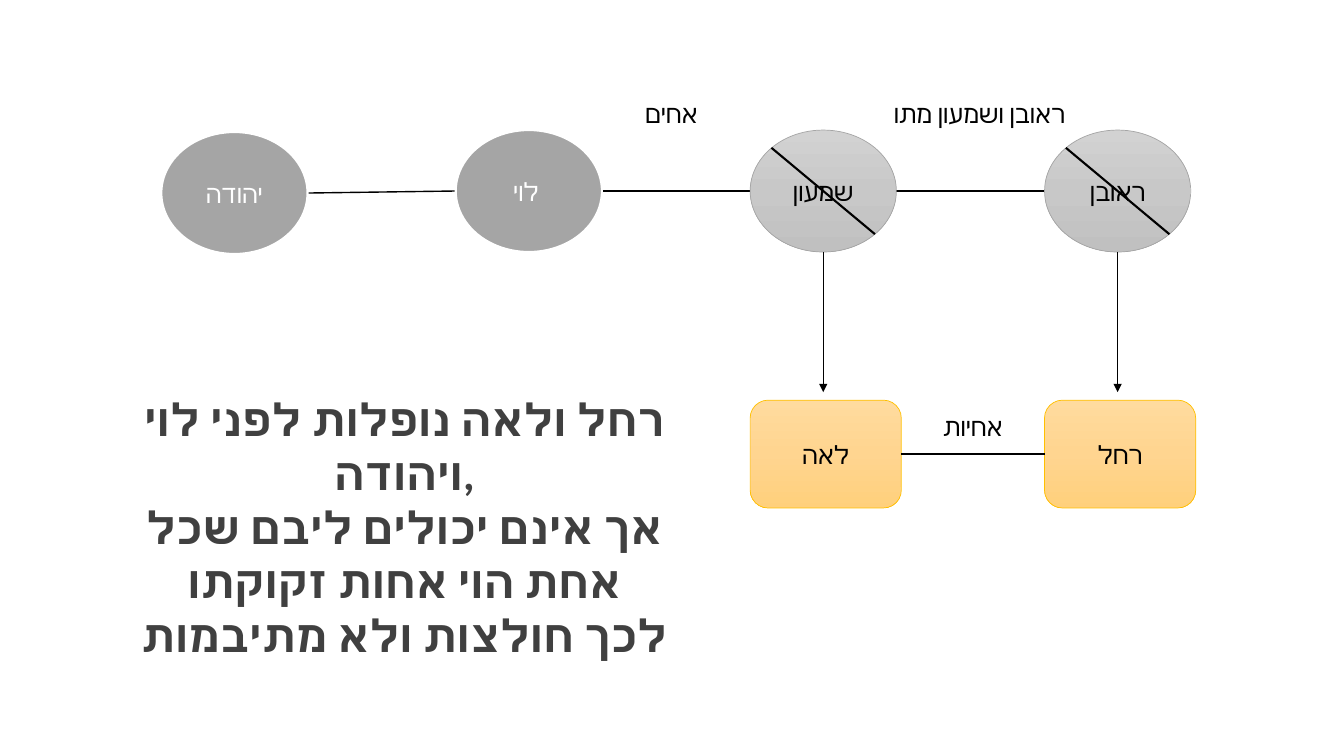
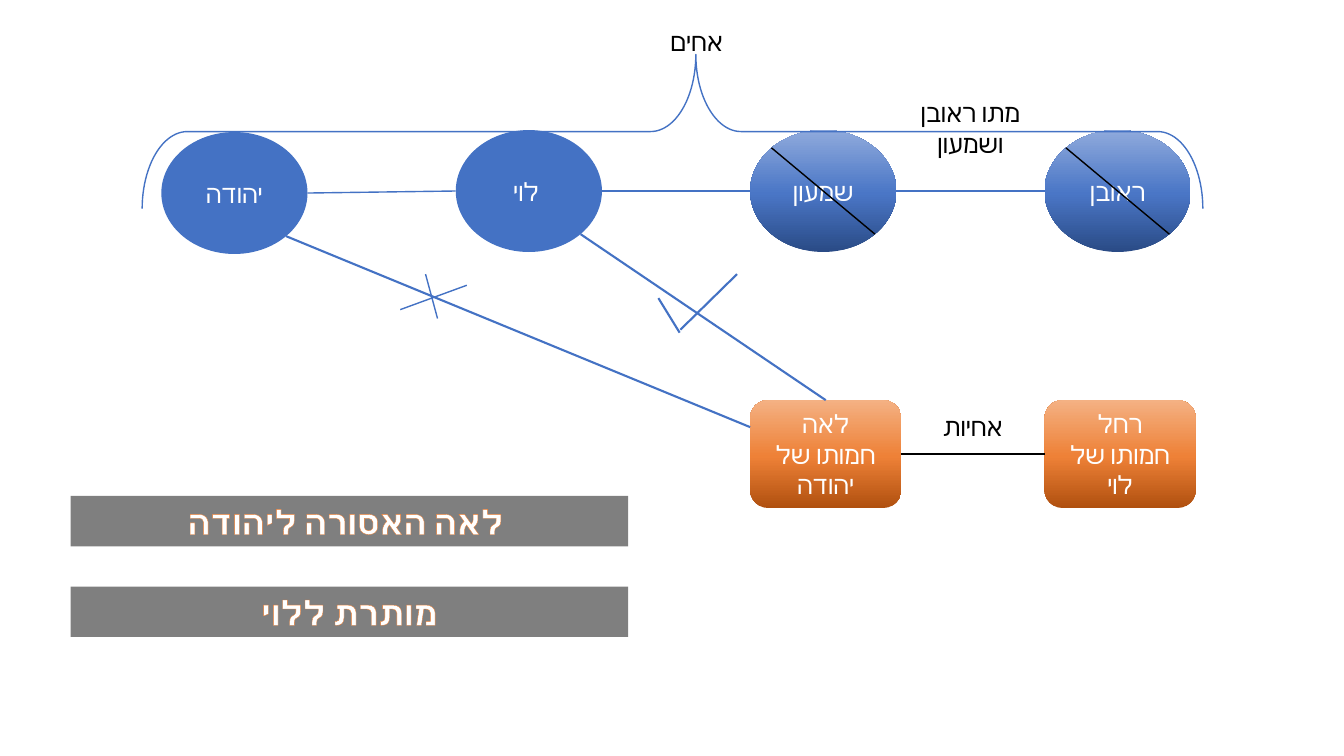
from dataclasses import dataclass

from lxml import etree
from pptx import Presentation
from pptx.dml.color import RGBColor
from pptx.enum.dml import MSO_PATTERN
from pptx.enum.shapes import MSO_CONNECTOR, MSO_SHAPE
from pptx.enum.text import MSO_ANCHOR, MSO_AUTO_SIZE, PP_ALIGN
from pptx.oxml.ns import qn
from pptx.util import Inches, Pt

STRAIGHT = MSO_CONNECTOR.STRAIGHT
OVAL = MSO_SHAPE.OVAL
ROUNDED = MSO_SHAPE.ROUNDED_RECTANGLE
RECTANGLE = MSO_SHAPE.RECTANGLE
BRACE = MSO_SHAPE.RIGHT_BRACE
CENTER = PP_ALIGN.CENTER
TOP = MSO_ANCHOR.TOP
MIDDLE = MSO_ANCHOR.MIDDLE
NO_AUTOFIT = MSO_AUTO_SIZE.NONE
DIAGONAL_PATTERN = MSO_PATTERN.DARK_UPWARD_DIAGONAL

TITLE_ONLY, BLANK = 5, 6
FIRST_COLUMN, COLUMN_STEP = 1.6, 2.92
BROTHER_TOP, SISTER_TOP = 1.29, 3.97
BROTHER_SIZE, SISTER_SIZE = (1.45, 1.21), (1.5, 1.07)
LABEL_HEIGHT = 0.4
ARC_SHARE = 0.146


@dataclass(frozen=True)
class Box:
    left: float
    top: float
    width: float
    height: float

    def point(self, across, down):
        return self.left + self.width * across, self.top + self.height * down

    def inches(self):
        return [Inches(value) for value in (self.left, self.top, self.width, self.height)]


@dataclass(frozen=True)
class Gradient:
    angle: int
    stops: tuple


@dataclass(frozen=True)
class Look:
    living: str
    living_line: tuple
    dead: Gradient
    dead_line: tuple
    sister: Gradient
    sister_line: tuple
    node_text: str
    link: str
    slash_width: float


@dataclass(frozen=True)
class Theme:
    font: str = "Calibri"
    black: str = "000000"
    white: str = "FFFFFF"
    pattern_front: str = "808080"
    pattern_back: str = "404040"
    outline: str = "ED7D31"
    body_size: int = 18
    banner_size: int = 24
    conclusion_size: int = 32
    thin: float = 1
    thick: float = 1.5


THEME = Theme()
GRAY_LOOK = Look(
    living="A5A5A5", living_line=(THEME.white, 1.5),
    dead=Gradient(90, ((0, "D2D2D2"), (50, "C8C8C8"), (100, "C0C0C0"))),
    dead_line=("A5A5A5", 0.5),
    sister=Gradient(90, ((0, "FFDB9E"), (50, "FFD590"), (100, "FFD07C"))),
    sister_line=("FFC000", 0.5),
    node_text=THEME.black, link=THEME.black, slash_width=1.5,
)
BLUE_LOOK = Look(
    living="4472C4", living_line=None,
    dead=Gradient(270, ((0, "2A4B86"), (48, "4A76C6"), (100, "8FAADC"))),
    dead_line=None,
    sister=Gradient(270, ((0, "B0500F"), (48, "EE8137"), (100, "F4B183"))),
    sister_line=None,
    node_text=THEME.white, link="4472C4", slash_width=1,
)


def color(value):
    return RGBColor.from_string(value)


def add_color(parent, value):
    return etree.SubElement(parent, qn("a:srgbClr"), val=value)


def paint(shape, fill, line=None):
    shape.shadow.inherit = False
    if isinstance(fill, Gradient):
        shape.fill.gradient()
        gradient = shape._element.spPr.find(qn("a:gradFill"))
        stop_list = gradient.find(qn("a:gsLst"))
        for stop in list(stop_list):
            stop_list.remove(stop)
        for position, value in fill.stops:
            stop = etree.SubElement(stop_list, qn("a:gs"), pos=str(position * 1000))
            add_color(stop, value)
        gradient.find(qn("a:lin")).set("ang", str(fill.angle * 60000))
    elif fill:
        shape.fill.solid()
        shape.fill.fore_color.rgb = color(fill)
    else:
        shape.fill.background()
    if line:
        shape.line.color.rgb = color(line[0])
        shape.line.width = Pt(line[1])
    else:
        shape.line.fill.background()


def write(shape, text, size, text_color, bold=False, anchor=MIDDLE):
    frame = shape.text_frame
    frame.text = text
    frame.word_wrap = True
    frame.auto_size = NO_AUTOFIT
    frame.vertical_anchor = anchor
    runs = []
    for paragraph in frame.paragraphs:
        paragraph.alignment = CENTER
        for run in paragraph.runs:
            run.font.name = THEME.font
            run.font.size = Pt(size)
            run.font.bold = bold
            run.font.color.rgb = color(text_color)
            etree.SubElement(run.font._element, qn("a:cs"), typeface=THEME.font)
            runs.append(run)
    return runs


def add_node(shapes, kind, box, text, fill, line, text_color):
    node = shapes.add_shape(kind, *box.inches())
    paint(node, fill, line)
    write(node, text, THEME.body_size, text_color)


def add_line(shapes, start, end, line_color, width=THEME.thin, arrow=False):
    connector = shapes.add_connector(STRAIGHT, *(Inches(value) for value in (*start, *end)))
    connector.line.color.rgb = color(line_color)
    connector.line.width = Pt(width)
    if arrow:
        etree.SubElement(connector.get_or_add_ln(), qn("a:tailEnd"), type="triangle")
    etree.SubElement(connector._element.spPr, qn("a:effectLst"))


def add_label(slide, left, top, width, text):
    label = slide.shapes.add_textbox(*Box(left, top, width, LABEL_HEIGHT).inches())
    write(label, text, THEME.body_size, THEME.black, anchor=TOP)


def column_box(column, top, size):
    return Box(FIRST_COLUMN + COLUMN_STEP * column, top, *size)


def add_brothers(slide, look):
    names = ("יהודה", "לוי ", "שמעון", "ראובן")
    tops = (BROTHER_TOP + 0.02,) + (BROTHER_TOP,) * 3
    boxes = [column_box(column, top, BROTHER_SIZE) for column, top in enumerate(tops)]
    for left_box, right_box in zip(boxes, boxes[1:]):
        add_line(slide.shapes, left_box.point(1, 0.5), right_box.point(0, 0.5), look.link)
    for column, (name, box) in enumerate(zip(names, boxes)):
        if column < 2:
            add_node(slide.shapes, OVAL, box, name, look.living, look.living_line, THEME.white)
        else:
            add_node(slide.shapes, OVAL, box, name, look.dead, look.dead_line, look.node_text)
            add_line(slide.shapes, box.point(ARC_SHARE, ARC_SHARE),
                     box.point(1 - ARC_SHARE, 1 - ARC_SHARE), THEME.black, look.slash_width)
    return boxes


def add_sisters(slide, look, names):
    boxes = [column_box(column, SISTER_TOP, SISTER_SIZE) for column in (2, 3)]
    for name, box in zip(names, boxes):
        add_node(slide.shapes, ROUNDED, box, name, look.sister, look.sister_line, look.node_text)
    leah, rachel = boxes
    start, end = leah.point(1, 0.5), rachel.point(0, 0.5)
    add_line(slide.shapes, start, end, THEME.black)
    add_label(slide, start[0], SISTER_TOP + 0.06, end[0] - start[0], "אחיות")
    return boxes


def add_brace(slide, box, line_color):
    center_x, center_y = box.point(0.5, 0.5)
    upright = Box(center_x - box.height / 2, center_y - box.width / 2, box.height, box.width)
    brace = slide.shapes.add_shape(BRACE, *upright.inches())
    brace.rotation = 270
    brace.adjustments[0] = 0.293
    brace.adjustments[1] = 0.522
    paint(brace, None, (line_color, THEME.thin))


def add_conclusion(slide, box, text):
    title = slide.shapes.title
    title.left, title.top, title.width, title.height = box.inches()
    for run in write(title, text, THEME.conclusion_size, THEME.black, bold=True, anchor=TOP):
        fill = run.font.fill
        fill.patterned()
        fill.pattern = DIAGONAL_PATTERN
        fill.fore_color.rgb = color(THEME.pattern_front)
        fill.back_color.rgb = color(THEME.pattern_back)


def add_banner(shapes, box, text):
    banner = shapes.add_shape(RECTANGLE, *box.inches())
    paint(banner, THEME.black)
    fill_color = banner._element.spPr.find(qn("a:solidFill"))[0]
    etree.SubElement(fill_color, qn("a:alpha"), val="50000")
    for run in write(banner, text, THEME.banner_size, THEME.white, bold=True):
        outline = etree.Element(qn("a:ln"), w=str(Pt(0.52)))
        add_color(etree.SubElement(outline, qn("a:solidFill")), THEME.outline)
        run.font._element.insert(0, outline)


def add_verdict(slide, link, mark_box, strokes, mark_width, banner_box, text):
    shapes = slide.shapes.add_group_shape().shapes
    add_line(shapes, *link, BLUE_LOOK.link, THEME.thick)
    add_banner(shapes, banner_box, text)
    for start, end in strokes:
        add_line(shapes, mark_box.point(*start), mark_box.point(*end), BLUE_LOOK.link, mark_width)


def build_release_slide(presentation):
    slide = presentation.slides.add_slide(presentation.slide_layouts[TITLE_ONLY])
    brothers = add_brothers(slide, GRAY_LOOK)
    sisters = add_sisters(slide, GRAY_LOOK, ("לאה", "רחל"))
    for brother, sister in zip(brothers[2:], sisters):
        start = brother.point(0.5, 1)
        add_line(slide.shapes, start, (start[0], sister.top - 0.08), GRAY_LOOK.link, arrow=True)
    add_label(slide, 5.24, 0.93, 2.84, "אחים")
    add_label(slide, 8.68, 0.93, 2.07, "ראובן ושמעון מתו")
    add_conclusion(slide, Box(0.99, 3.84, 6.04, 2.79), "\n".join((
        "רחל ולאה נופלות לפני לוי ויהודה,",
        "אך אינם יכולים ליבם שכל אחת הוי אחות זקוקתו",
        "לכך חולצות ולא מתיבמות",
    )))


def build_permission_slide(presentation):
    slide = presentation.slides.add_slide(presentation.slide_layouts[BLANK])
    judah, levi = add_brothers(slide, BLUE_LOOK)[:2]
    leah = add_sisters(slide, BLUE_LOOK, ("לאה\nחמותו של יהודה", "רחל\nחמותו של לוי"))[0]
    add_brace(slide, Box(1.41, 0.54, 10.52, 1.53), BLUE_LOOK.link)
    add_label(slide, 5.49, 0.21, 2.84, "אחים")
    add_label(slide, 8.68, 0.92, 1.89, "מתו ראובן ושמעון")
    lower_right = (1 - ARC_SHARE, 1 - ARC_SHARE)
    cross = (((0.38, 0), (0.56, 1)), ((0, 0.8), (1, 0.25)))
    check = (((0, 0.41), (0.27, 1)), ((0.28, 0.95), (1, 0)))
    add_verdict(slide, (judah.point(*lower_right), leah.point(0, 0.25)),
                Box(3.97, 2.72, 0.66, 0.44), cross, THEME.thin,
                Box(0.7, 4.92, 5.53, 0.5), "לאה האסורה ליהודה ")
    add_verdict(slide, (levi.point(*lower_right), leah.point(0.5, 0)),
                Box(6.53, 2.72, 0.78, 0.58), check, THEME.thick,
                Box(0.7, 5.82, 5.53, 0.5), "מותרת ללוי")


def main():
    presentation = Presentation()
    presentation.slide_width = Inches(13.33)
    presentation.slide_height = Inches(7.5)
    build_release_slide(presentation)
    build_permission_slide(presentation)
    presentation.save("out.pptx")


if __name__ == "__main__":
    main()
